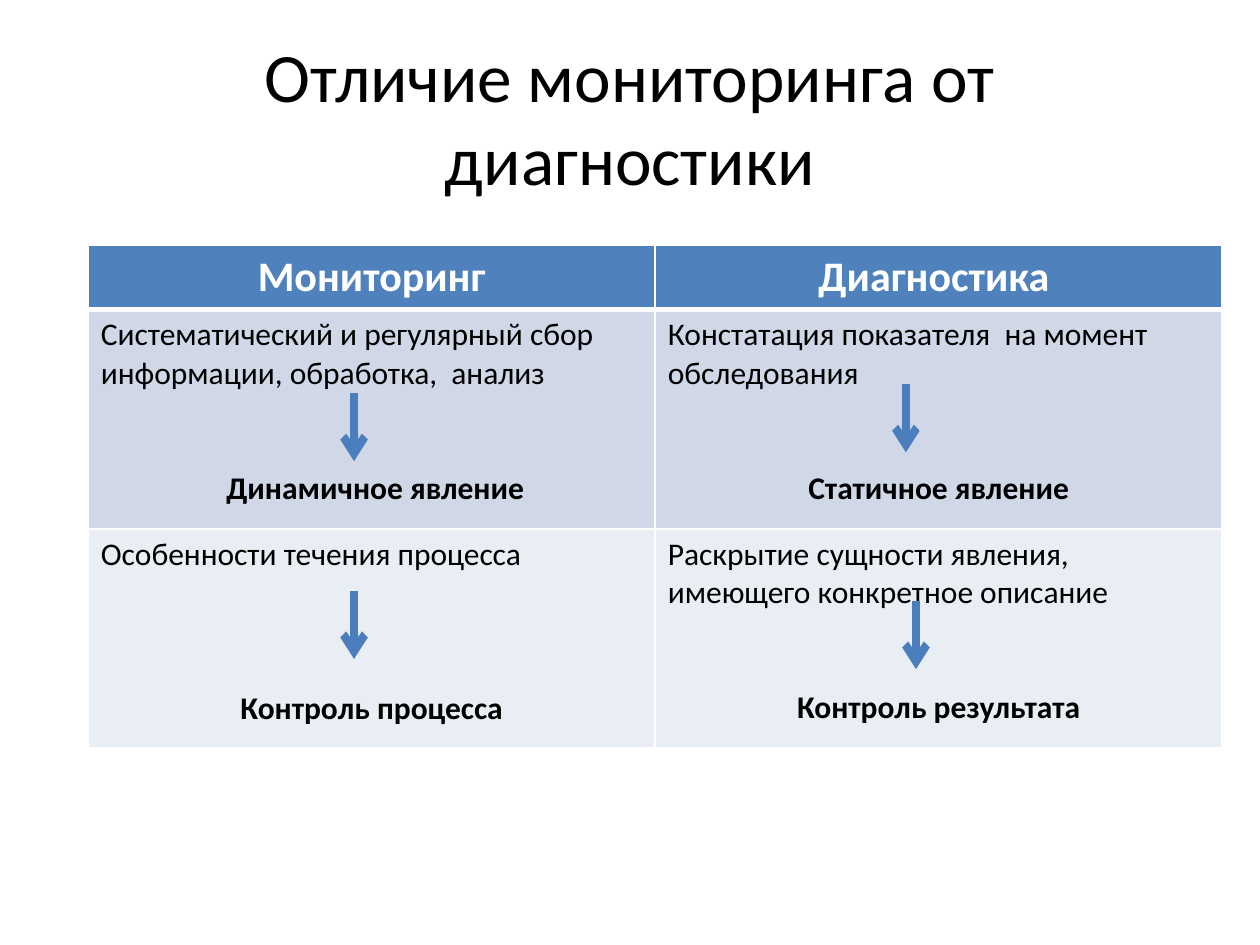
from lxml import etree
from pptx import Presentation
from pptx import util as u
from pptx.dml.color import RGBColor
from pptx.enum import shapes, text
from pptx.oxml import ns

BLACK = RGBColor(0x00, 0x00, 0x00)
WHITE = RGBColor(0xFF, 0xFF, 0xFF)
HEADER_BLUE = RGBColor(0x4F, 0x81, 0xBD)
ARROW_BLUE = RGBColor(0x4B, 0x7E, 0xBC)
BANDS = [RGBColor(0xD0, 0xD8, 0xE8), RGBColor(0xE9, 0xED, 0xF4)]

FONT = "Calibri"
LINE_HEIGHT = 22
HEADINGS = ["Мониторинг", "Диагностика "]
COMPARISON = [
    [
        ("Систематический и регулярный сбор информации, обработка,  анализ", 2, [" ", "Динамичное явление"]),
        ("Констатация показателя  на момент обследования", 2, ["Статичное явление"]),
    ],
    [
        ("Особенности течения процесса", 3, ["Контроль процесса"]),
        ("Раскрытие сущности явления, имеющего конкретное описание", 2, ["Контроль результата"]),
    ],
]
ARROW_TOPS = [(2.81, 3.12), (7.19, 3.05), (2.81, 4.69), (7.27, 4.77)]
ARROW_LENGTH = 0.54


def add_span(para, words, size, color=BLACK, bold=False):
    """Add one formatted run to a paragraph."""
    span = para.add_run()
    span.text = words
    span.font.name = FONT
    span.font.size = u.Pt(size)
    span.font.bold = bold
    span.font.color.rgb = color


def style_cell(cell, color, bottom_width=1):
    """Give a cell white borders and a solid fill."""
    properties = cell._tc.get_or_add_tcPr()
    for side, width in zip("LRTB", (1, 1, 1, bottom_width)):
        border = etree.SubElement(properties, ns.qn(f"a:ln{side}"), w=str(u.Pt(width)))
        fill = etree.SubElement(border, ns.qn("a:solidFill"))
        etree.SubElement(fill, ns.qn("a:srgbClr"), val=str(WHITE))
    cell.fill.solid()
    cell.fill.fore_color.rgb = color


def place_title(page, left, top, width, height):
    """Place and format the slide title."""
    title = page.shapes.title
    title.left, title.top = u.Inches(left), u.Inches(top)
    title.width, title.height = u.Inches(width), u.Inches(height)
    title.text_frame.vertical_anchor = text.MSO_ANCHOR.MIDDLE
    para = title.text_frame.paragraphs[0]
    para.alignment = text.PP_ALIGN.CENTER
    add_span(para, "Отличие мониторинга от диагностики", 39.6)


def fill_comparison(cell, description, gap_lines, conclusion):
    """Write a description and, below a gap, its bold conclusion."""
    para = cell.text_frame.paragraphs[0]
    add_span(para, description, 18)
    para = cell.text_frame.add_paragraph()
    para.alignment = text.PP_ALIGN.CENTER
    para.space_before = u.Pt(gap_lines * LINE_HEIGHT)
    for words in conclusion:
        add_span(para, words, 18, bold=bool(words.strip()))


def place_table(page, left, top, width, height):
    """Place the comparison table with its header and two bands."""
    frame = page.shapes.add_table(
        1 + len(COMPARISON), len(HEADINGS),
        u.Inches(left), u.Inches(top), u.Inches(width), u.Inches(height),
    )
    table = frame.table
    header_height = 0.44
    table.rows[0].height = u.Inches(header_height)
    for column, heading in enumerate(HEADINGS):
        cell = table.cell(0, column)
        style_cell(cell, HEADER_BLUE, bottom_width=3)
        para = cell.text_frame.paragraphs[0]
        para.alignment = text.PP_ALIGN.CENTER
        add_span(para, heading, 24, WHITE, bold=True)
    for row, (entries, band) in enumerate(zip(COMPARISON, BANDS), start=1):
        table.rows[row].height = u.Inches((height - header_height) / len(COMPARISON))
        for column, entry in enumerate(entries):
            cell = table.cell(row, column)
            style_cell(cell, band)
            fill_comparison(cell, *entry)


def place_arrow(page, left, top, length):
    """Place a downward arrow."""
    arrow = page.shapes.add_connector(
        shapes.MSO_CONNECTOR.STRAIGHT,
        u.Inches(left), u.Inches(top), u.Inches(left), u.Inches(top + length),
    )
    arrow.line.color.rgb = ARROW_BLUE
    arrow.line.width = u.Pt(4.5)
    etree.SubElement(arrow.line._get_or_add_ln(), ns.qn("a:tailEnd"), type="arrow")
    etree.SubElement(arrow._element.spPr, ns.qn("a:effectLst"))


def main():
    """Build and save the slide."""
    deck = Presentation()
    deck.slide_width, deck.slide_height = u.Inches(10), u.Inches(7.5)
    page = deck.slides.add_slide(deck.slide_layouts[5])
    place_title(page, 0.5, 0.3, 9, 1.25)
    place_table(page, 0.7, 1.95, 9, 3.92)
    for left, top in ARROW_TOPS:
        place_arrow(page, left, top, ARROW_LENGTH)
    deck.save("out.pptx")


if __name__ == "__main__":
    main()
